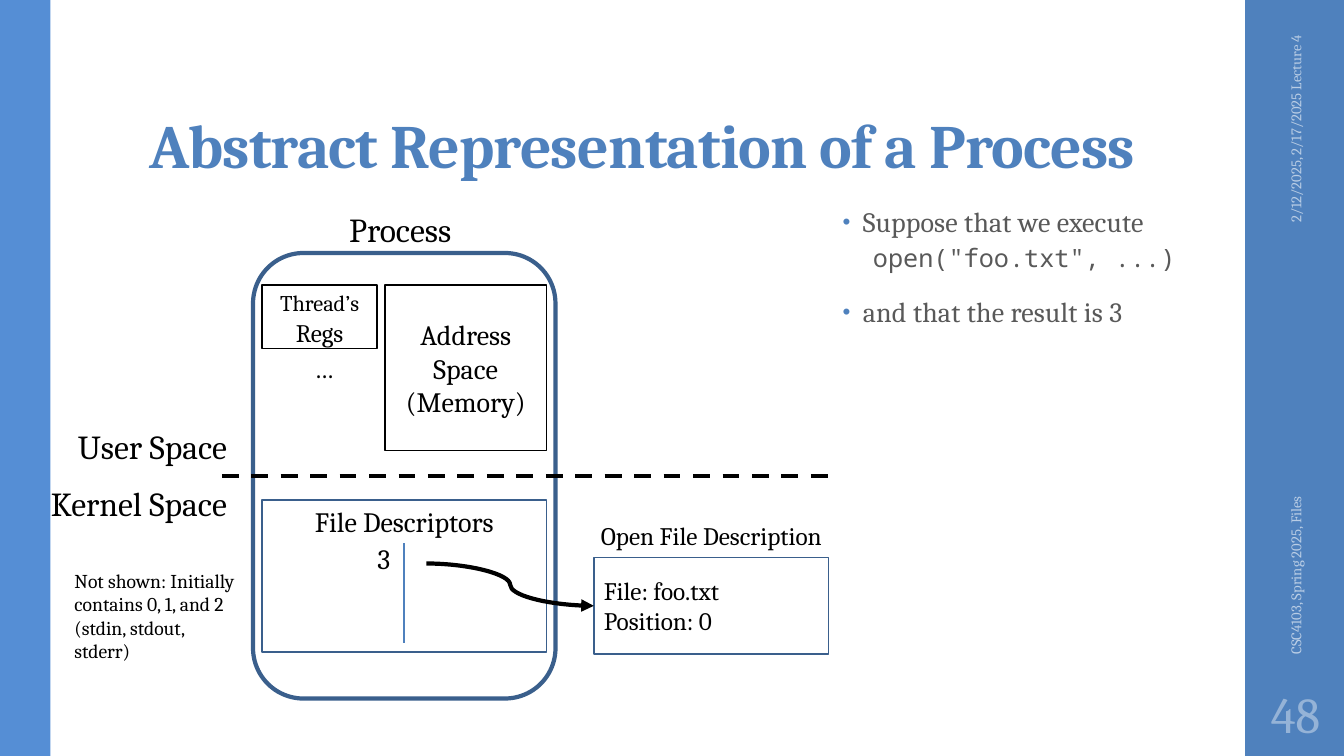
import pptx
import pptx.util
import pptx.dml.color
import pptx.enum.dml
import pptx.enum.shapes
import pptx.enum.text
import pptx.oxml
import pptx.oxml.ns
import lxml.etree

PX = 9144
FONT = "Cambria"
MONO = "Noto Sans Mono"
HUES = {
    "black": "000000", "white": "FFFFFF", "blue": "4F81BD", "light": "558ED5",
    "navy": "3A5F8C", "gray": "595959", "pale": "B9CDE5", "mist": "95B3D7",
}
ALIGN = pptx.enum.text.PP_ALIGN
ANCHOR = pptx.enum.text.MSO_ANCHOR
SHAPE = pptx.enum.shapes.MSO_SHAPE
LINK = pptx.enum.shapes.MSO_CONNECTOR


def hue(name):
    return pptx.dml.color.RGBColor.from_string(HUES[name])


def node(parent, tag, **attrs):
    return lxml.etree.SubElement(parent, pptx.oxml.ns.qn(tag), attrs)


class Board:
    def __init__(self, wide, high):
        self.deck = pptx.Presentation()
        self.deck.slide_width = wide * PX
        self.deck.slide_height = high * PX
        self.slide = self.deck.slides.add_slide(self.deck.slide_layouts[6])

    def box(self, area, kind=SHAPE.RECTANGLE, fill=None, line=None, width=1.1):
        shape = self.slide.shapes.add_shape(kind, *[n * PX for n in area])
        shape.shadow.inherit = False
        if fill:
            shape.fill.solid()
            shape.fill.fore_color.rgb = hue(fill)
        else:
            shape.fill.background()
        if line:
            shape.line.color.rgb = hue(line)
            shape.line.width = pptx.util.Pt(width)
        else:
            shape.line.fill.background()
        return shape

    def frame(self, shape, anchor=ANCHOR.TOP, wrap=True, inset=(10, 5, 10, 5)):
        frame = shape.text_frame
        frame.word_wrap = wrap
        frame.vertical_anchor = anchor
        (frame.margin_left, frame.margin_top,
         frame.margin_right, frame.margin_bottom) = [n * PX for n in inset]
        return frame

    def label(self, area, turn=0, **style):
        shape = self.slide.shapes.add_textbox(*[n * PX for n in area])
        shape.rotation = turn
        return self.frame(shape, **style)

    def para(self, frame, align=ALIGN.LEFT, space=None, before=0, after=0):
        first = frame.paragraphs[0]
        para = frame.add_paragraph() if first.runs else first
        para.alignment = align
        para.space_before = pptx.util.Pt(before)
        para.space_after = pptx.util.Pt(after)
        if space:
            para.line_spacing = space
        return para

    def run(self, para, text, size, color="black", font=FONT, bold=False, track=0):
        run = para.add_run()
        run.text = text
        run.font.name = font
        run.font.size = pptx.util.Pt(size)
        run.font.bold = bold
        run.font.color.rgb = hue(color)
        if track:
            run.font._element.set("spc", str(track))

    def bullet(self, para, left, hang=0, mark=None):
        props = para._p.get_or_add_pPr()
        props.set("marL", str(left * PX))
        props.set("indent", str(-hang * PX))
        if mark:
            node(node(props, "a:buClr"), "a:srgbClr", val=HUES["blue"])
            node(props, "a:buSzPct", val="80000")
            node(props, "a:buFont", typeface="Arial")
            node(props, "a:buChar", char=mark)

    def line(self, start, end, color="black", width=3, kind=LINK.STRAIGHT,
             dash=False, arrow=False):
        link = self.slide.shapes.add_connector(kind, *[n * PX for n in start + end])
        link.line.color.rgb = hue(color)
        link.line.width = pptx.util.Pt(width)
        if dash:
            link.line.dash_style = pptx.enum.dml.MSO_LINE.DASH
        if arrow:
            node(link.line._get_or_add_ln(), "a:tailEnd", type="triangle")
        node(link._element.spPr, "a:effectLst")

    def note(self, area, text, size, align=ALIGN.LEFT, color="black", **style):
        para = self.para(self.label(area, **style), align)
        self.run(para, text, size, color)

    def save(self):
        self.deck.save("out.pptx")


def theme(board):
    board.box((1235, 0, 100, 750), fill="blue")
    board.box((0, 0, 50, 750), fill="light")
    title = board.label((138, 32, 1060, 153), anchor=ANCHOR.BOTTOM,
                        inset=(10, 3, 10, 5))
    board.run(board.para(title, space=0.9), "Abstract Representation of a Process",
              44, "blue", bold=True, track=-50)
    board.note((1181, 109, 208, 40), "2/12/2025, 2/17/2025 Lecture 4", 10.5,
               ALIGN.RIGHT, "pale", turn=270, anchor=ANCHOR.MIDDLE)
    board.note((1089, 443, 392, 40), "CSC4103, Spring 2025, Files", 10.5,
               color="pale", turn=270, anchor=ANCHOR.MIDDLE)
    board.note((1235, 675, 100, 65), "48", 36, ALIGN.CENTER, "mist",
               anchor=ANCHOR.MIDDLE, inset=(5, 5, 5, 5))


def points(board):
    body = board.label((826, 200, 385, 476))

    def point(text):
        para = board.para(body, space=0.95, before=14, after=2)
        board.bullet(para, 20, 20, "•")
        board.run(para, text, 20, "gray", track=10)

    point("Suppose that we execute")
    code = board.para(body, space=0.9, before=3, after=3)
    board.bullet(code, 30)
    board.run(code, 'open("foo.txt", ...)', 18, "gray", MONO)
    point("and that the result is 3")


def process(board):
    board.box((251, 251, 300, 442), SHAPE.ROUNDED_RECTANGLE, line="navy", width=3)
    board.line((220, 472), (822, 472), dash=True)
    board.note((64, 418, 171, 50), "User Space", 24, ALIGN.RIGHT, wrap=False)
    board.note((39, 474, 196, 50), "Kernel Space", 24, ALIGN.RIGHT, wrap=False)

    cells = [
        ((382, 283, 160, 164), "black", ANCHOR.MIDDLE, ALIGN.CENTER,
         [[("Address Space (Memory)", 20)]]),
        ((260, 283, 114, 63), "black", ANCHOR.MIDDLE, ALIGN.CENTER,
         [[("Thread’s", 16), (" Regs", 18)]]),
        ((260, 496, 282, 151), "navy", ANCHOR.TOP, ALIGN.CENTER,
         [[("File Descriptors", 20)]]),
        ((589, 553, 233, 96), "navy", ANCHOR.MIDDLE, ALIGN.LEFT,
         [[("File: foo.txt", 18)], [("Position: 0", 18)]]),
    ]
    for area, line, anchor, align, rows in cells:
        cell = board.frame(board.box(area, fill="white", line=line), anchor)
        for row in rows:
            para = board.para(cell, align)
            for text, size in row:
                board.run(para, text, size)

    board.note((302, 346, 38, 40), "…", 18, wrap=False)
    board.line((401, 539), (401, 638), "blue", 1.5)
    board.note((64, 559, 184, 104),
               "Not shown: Initially contains 0, 1, and 2 (stdin, stdout, stderr)", 14)
    board.note((363, 532, 34, 44), "3", 20, ALIGN.RIGHT, wrap=False)
    board.note((585, 511, 241, 40), "Open File Description", 18, ALIGN.CENTER,
               wrap=False)
    board.note((335, 202, 124, 50), "Process", 24, ALIGN.CENTER, wrap=False)
    board.line((423, 559), (589, 601), kind=LINK.CURVE, arrow=True)


def main():
    board = Board(1333, 750)
    theme(board)
    points(board)
    process(board)
    board.save()


if __name__ == "__main__":
    main()
